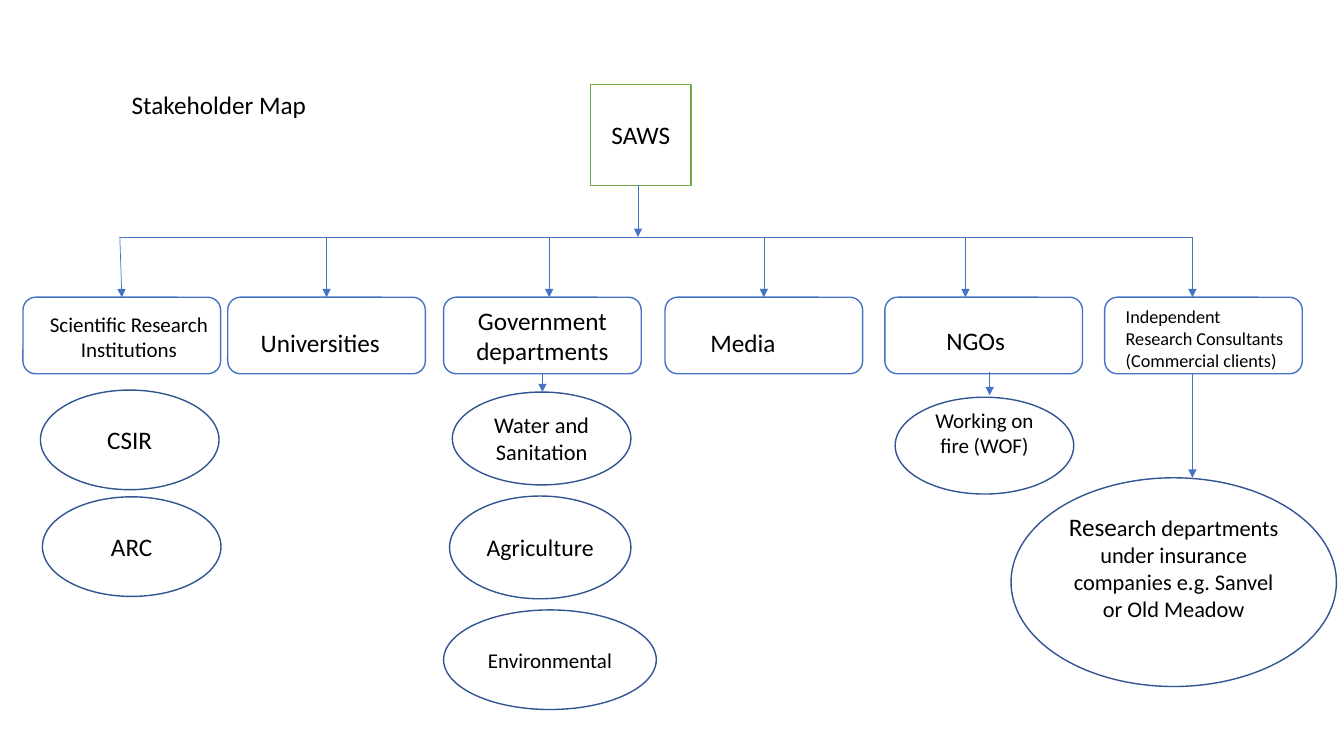
import pptx
import pptx.util
import pptx.dml.color
import pptx.enum.shapes
import pptx.enum.text
import pptx.oxml.ns
from lxml import etree

Cm = pptx.util.Cm
Pt = pptx.util.Pt
Kind = pptx.enum.shapes.MSO_SHAPE
Align = pptx.enum.text.PP_ALIGN
Anchor = pptx.enum.text.MSO_ANCHOR
qn = pptx.oxml.ns.qn

BLUE, NAVY, GREEN = "4472C4", "325491", "70AD47"
WHITE, BLACK = "FFFFFF", "000000"


def color(code):
    return pptx.dml.color.RGBColor.from_string(code)


class Chart:
    """Draws the stakeholder map on one slide; lengths are in centimetres."""
    font = "Calibri"

    def __init__(self, slide):
        self.shapes = slide.shapes

    def letter(self, frame, runs, align):
        """Fill a frame with one paragraph of (text, size) runs."""
        par = frame.paragraphs[0]
        par.alignment = align
        par.font.name = self.font
        par.font.color.rgb = color(BLACK)
        if len(runs) == 1:
            par.font.size = Pt(runs[0][1])
        for text, size in runs:
            run = par.add_run()
            run.text = text
            if len(runs) > 1:
                run.font.size = Pt(size)

    def node(self, kind, place, line, runs=(), fill=None, foot=0.13):
        """Add an outlined shape; foot is the inset below its text."""
        shape = self.shapes.add_shape(kind, *map(Cm, place))
        shape.shadow.inherit = False
        shape.line.color.rgb = color(line)
        shape.line.width = Pt(1)
        if fill:
            shape.fill.solid()
            shape.fill.fore_color.rgb = color(fill)
        else:
            shape.fill.background()
        if runs:
            frame = shape.text_frame
            frame.word_wrap = True
            frame.vertical_anchor = Anchor.MIDDLE
            frame.margin_bottom = Cm(foot)
            self.letter(frame, runs, Align.CENTER)

    def label(self, place, text, size=18, align=Align.LEFT, wrap=True):
        frame = self.shapes.add_textbox(*map(Cm, place)).text_frame
        frame.word_wrap = wrap
        self.letter(frame, [(text, size)], align)

    def link(self, start, end, arrow=True):
        line = self.shapes.add_connector(
            pptx.enum.shapes.MSO_CONNECTOR.STRAIGHT,
            *map(Cm, (*start, *end)))
        line.line.color.rgb = color(BLUE)
        line.line.width = Pt(0.5)
        props = line._element.spPr
        if arrow:
            tail = etree.SubElement(props.find(qn("a:ln")), qn("a:tailEnd"))
            tail.set("type", "triangle")
        etree.SubElement(props, qn("a:effectLst"))


BAR, TOP, WIDE, HIGH = 5.97, 7.49, 4.98, 1.93
BASE = TOP + HIGH

# left edge of each group box, arrow start and arrow end
GROUPS = [
    (0.58, 3.02, 3.07),
    (5.74, 8.23, 8.23),
    (11.18, 13.84, 13.84),
    (16.76, 19.25, 19.25),
    (22.3, 24.33, 24.33),
    (27.84, 30.05, 30.05),
]
GOV = 2

MEMBERS = [
    ((1.02, 9.83, 4.5, 2.51), [("CSIR", 18)], 0.13),
    ((1.07, 12.52, 4.5, 2.51), [("ARC", 18)], 0.13),
    ((11.18, 15.37, 5.36, 2.51), [("Environmental", 15)], 0.13),
    ((22.56, 10.01, 4.5, 2.44), [("Working on fire (WOF)", 15)], 0.78),
    ((11.4, 9.88, 4.5, 2.34), [("Water and Sanitation", 16)], 0.13),
    ((11.33, 12.5, 4.57, 2.59), [("Agriculture", 17)], 0.13),
    ((25.48, 12.04, 8.2, 5.26),
     [("Rese", 18), ("arch departments under insurance companies e.g. "
                     "Sanvel or Old Meadow", 16)], 0.9),
]

LABELS = [
    ((0.76, 7.72, 4.98, 2.18), "Scientific Research Institutions", 15,
     Align.CENTER, True),
    ((6.32, 8.13, 3.56, 1.02), "Universities", 18, Align.LEFT, False),
    ((28.12, 7.57, 4.52, 2.49),
     "Independent Research Consultants (Commercial clients)", 13,
     Align.LEFT, True),
    ((17.65, 8.13, 2.18, 1.02), "Media", 18, Align.LEFT, False),
    ((23.6, 8.08, 2.01, 1.02), "NGOs", 18, Align.LEFT, False),
]

# x, top and bottom of the arrows from a group to its members
DROPS = [(30.05, BASE, 12.04), (13.67, BASE, 9.88), (24.94, 9.37, 9.96)]


def main():
    deck = pptx.Presentation()
    deck.slide_width, deck.slide_height = Cm(33.87), Cm(19.05)
    chart = Chart(deck.slides.add_slide(deck.slide_layouts[6]))

    chart.node(Kind.RECTANGLE, (14.88, 2.13, 2.54, 2.54), GREEN,
               [("SAWS", 18)], WHITE)
    chart.link((16.08, 4.67), (16.08, BAR))

    for i, (left, _, _) in enumerate(GROUPS):
        runs = [("Government departments", 18)] if i == GOV else ()
        chart.node(Kind.ROUNDED_RECTANGLE, (left, TOP, WIDE, HIGH), BLUE, runs)
    for place, runs, foot in MEMBERS:
        chart.node(Kind.OVAL, place, NAVY, runs, WHITE, foot)
    for label in LABELS:
        chart.label(*label)

    for x, top, end in DROPS:
        chart.link((x, top), (x, end))
    chart.link((GROUPS[0][1], BAR), (GROUPS[-1][1], BAR), arrow=False)
    for _, start, end in GROUPS:
        chart.link((start, BAR), (end, TOP))

    chart.label((3.07, 2.13, 8.36, 1.02), "Stakeholder Map")
    deck.save("out.pptx")


if __name__ == "__main__":
    main()
